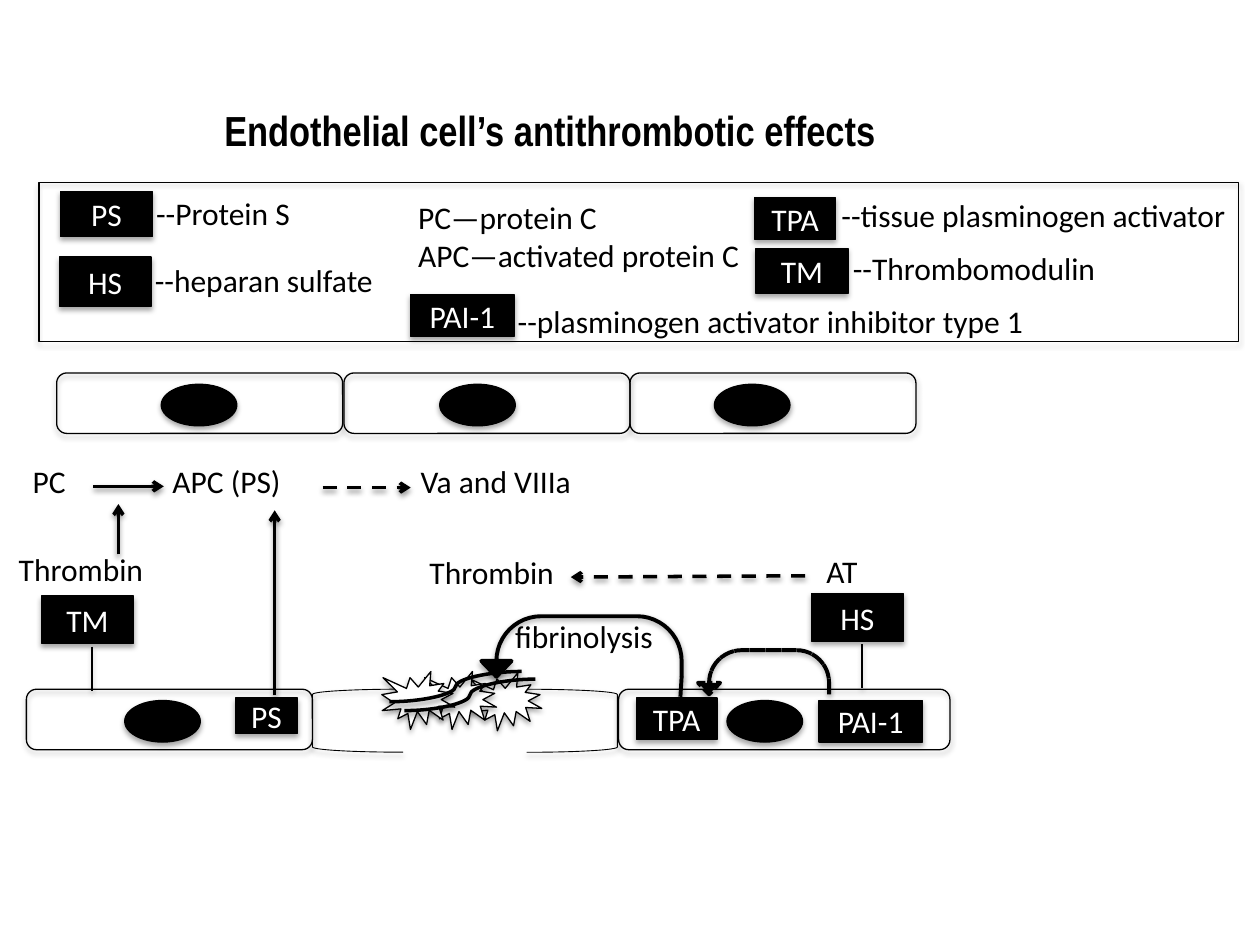
"""Build the slide on the antithrombotic effects of endothelial cells."""
import lxml.etree
import pptx
import pptx.dml.color
import pptx.enum.dml
import pptx.enum.shapes
import pptx.enum.text
import pptx.oxml.ns
import pptx.util

Inches, Pt = pptx.util.Inches, pptx.util.Pt
SHAPE = pptx.enum.shapes.MSO_SHAPE
CONNECTOR = pptx.enum.shapes.MSO_CONNECTOR
DASH = pptx.enum.dml.MSO_LINE
ALIGN = pptx.enum.text.PP_ALIGN
ANCHOR = pptx.enum.text.MSO_ANCHOR
BLACK = pptx.dml.color.RGBColor(0, 0, 0)
WHITE = pptx.dml.color.RGBColor(255, 255, 255)

TITLE = "Endothelial cell’s antithrombotic effects"
LEGEND_FRAME = (0.31, 1.45, 9.52, 1.26)
CELL_HEIGHT = 0.48
NUCLEUS_DROP, NUCLEUS_SIZE = 0.09, (0.6, 0.33)
CELLS = [  # left, top, width, nucleus left
    (0.45, 2.96, 2.27, 1.28),
    (2.73, 2.96, 2.27, 3.49),
    (5, 2.96, 2.27, 5.67),
    (0.21, 5.47, 2.27, 0.99),
    (4.91, 5.47, 2.63, 5.77),
]
GAP_EDGES = [(2.48, 0), (4.18, 180)]
FACTORS = [
    ("PS", 0.48, 1.52, 0.73, 0.36),
    ("HS", 0.47, 2.04, 0.73, 0.39),
    ("TPA", 5.99, 1.57, 0.64, 0.33),
    ("TM", 6, 1.97, 0.73, 0.36),
    ("PAI-1", 3.26, 2.34, 0.82, 0.33),
    ("PS", 1.87, 5.54, 0.49, 0.28),
    ("TPA", 5.05, 5.54, 0.64, 0.33),
    ("PAI-1", 6.5, 5.56, 0.82, 0.33),
]
RECEPTORS = [("TM", 0.33, 4.73, 0.73, 0.38), ("HS", 6.44, 4.71, 0.73, 0.38)]
RECEPTOR_LEG = (1.06, 0.55, 1.98, 0.55)
NOTES = [
    ("--Protein S", 1.14, 1.49, 1.47),
    ("--heparan sulfate", 1.13, 2.02, 2.18),
    ("PC—protein C\nAPC—activated protein C", 3.22, 1.52, 3.08),
    ("--tissue plasminogen activator", 6.58, 1.51, 3.42),
    ("--Thrombomodulin", 6.67, 1.93, 2.46),
    ("--plasminogen activator inhibitor type 1", 4.01, 2.35, 5.32),
    ("PC", 0.16, 3.62, 1.35),
    ("APC (PS)", 1.27, 3.62, 1.45),
    ("Va and VIIIa", 3.24, 3.62, 1.95),
    ("Thrombin", 0.05, 4.32, 1.41),
    ("Thrombin", 3.31, 4.34, 1.35),
    ("AT", 6.46, 4.33, 0.54),
    ("fibrinolysis", 3.99, 4.85, 1.54),
]
ACTIVATIONS = [
    (0.74, 3.86, 1.3, 3.86),
    (0.94, 4.4, 0.94, 4),
    (2.18, 5.52, 2.18, 4.05),
]
INHIBITIONS = [(2.56, 3.87, 3.26, 3.87), (6.39, 4.57, 4.53, 4.58)]
TURNS = [
    ((3.82, 4.89, 1.59, 0.48), None),
    ((5.54, 5.16, 1.04, 0.35), DASH.SQUARE_DOT),
]
TURN_ADJUSTMENTS = (0, 0.25, 0.26, 0.74, 1)
TPA_STEM = (5.41, 5.37, 5.4, 5.53)
PLATELETS = [(3.72, 5.34), (3.36, 5.33), (3.03, 5.33)]
FIBRIN = [(3.09, 5.57, 4.14, 5.33), (3.21, 5.64, 4.25, 5.39)]


def add_shadow(item, opacity):
    effects = lxml.etree.SubElement(item._element.spPr, pptx.oxml.ns.qn("a:effectLst"))
    shadow = lxml.etree.SubElement(
        effects, pptx.oxml.ns.qn("a:outerShdw"), blurRad=str(Pt(3.1)),
        dist=str(Pt(1.8)), dir="5400000", rotWithShape="0")
    color = lxml.etree.SubElement(shadow, pptx.oxml.ns.qn("a:srgbClr"), val="000000")
    lxml.etree.SubElement(color, pptx.oxml.ns.qn("a:alpha"), val=str(opacity * 1000))


def style_line(line, width, dash=None):
    line.color.rgb = BLACK
    line.width = Pt(width)
    if dash is not None:
        line.dash_style = dash


def style_text(frame, color, font="Calibri", size=18, bold=False, align=ALIGN.LEFT):
    for paragraph in frame.paragraphs:
        paragraph.alignment = align
        for run in paragraph.runs:
            run.font.name, run.font.size, run.font.bold = font, Pt(size), bold
            run.font.color.rgb = color


def add_figure(slide, kind, box, fill=None, width=0.75, dash=None, adjustments=()):
    figure = slide.shapes.add_shape(kind, *map(Inches, box))
    for index, value in enumerate(adjustments):
        figure.adjustments[index] = value
    if fill is None:
        figure.fill.background()
    else:
        figure.fill.solid()
        figure.fill.fore_color.rgb = fill
    style_line(figure.line, width, dash)
    add_shadow(figure, 35)
    return figure


def add_factor(slide, kind, name, box, adjustments=()):
    factor = add_figure(slide, kind, box, BLACK, adjustments=adjustments)
    factor.text_frame.text = name
    factor.text_frame.vertical_anchor = ANCHOR.MIDDLE
    style_text(factor.text_frame, WHITE, align=ALIGN.CENTER)


def add_link(slide, ends, kind=CONNECTOR.STRAIGHT, width=2, dash=None, arrow=False):
    link = slide.shapes.add_connector(kind, *map(Inches, ends))
    style_line(link.line, width, dash)
    if arrow:
        lxml.etree.SubElement(
            link.line._get_or_add_ln(), pptx.oxml.ns.qn("a:tailEnd"), type="arrow")
    add_shadow(link, 38)


def add_note(slide, text, left, top, width):
    height = 0.4 + 0.31 * text.count("\n")
    note = slide.shapes.add_textbox(*map(Inches, (left, top, width, height)))
    note.text_frame.word_wrap = True
    note.text_frame.text = text
    note.text_frame.auto_size = pptx.enum.text.MSO_AUTO_SIZE.SHAPE_TO_FIT_TEXT
    style_text(note.text_frame, BLACK)


def add_title(slide):
    title = slide.shapes.title
    title.left, title.top, title.width, title.height = map(Inches, (1.68, 0.78, 8.05, 0.88))
    title.text_frame.text = TITLE
    title.text_frame.vertical_anchor = ANCHOR.TOP
    style_text(title.text_frame, BLACK, "Arial Narrow", 24, True)


def main():
    deck = pptx.Presentation()
    deck.slide_width, deck.slide_height = Inches(10), Inches(7.5)
    slide = deck.slides.add_slide(deck.slide_layouts[5])
    add_title(slide)
    add_figure(slide, SHAPE.RECTANGLE, LEGEND_FRAME)
    for left, top, width, nucleus_left in CELLS:
        add_figure(slide, SHAPE.ROUNDED_RECTANGLE, (left, top, width, CELL_HEIGHT))
        nucleus = (nucleus_left, top + NUCLEUS_DROP, *NUCLEUS_SIZE)
        add_figure(slide, SHAPE.OVAL, nucleus, BLACK)
    for left, angle in GAP_EDGES:
        edge = add_figure(slide, SHAPE.LEFT_BRACKET, (left, 5.47, 0.72, 0.5), width=0.5)
        edge.rotation = angle
    for name, *box in RECEPTORS:
        add_factor(slide, SHAPE.LINE_CALLOUT_1, name, box, RECEPTOR_LEG)
    for name, *box in FACTORS:
        add_factor(slide, SHAPE.RECTANGLE, name, box)
    for ends in ACTIVATIONS:
        add_link(slide, ends, arrow=True)
    for ends in INHIBITIONS:
        add_link(slide, ends, dash=DASH.DASH, arrow=True)
    for box, dash in TURNS:
        turn = add_figure(slide, SHAPE.U_TURN_ARROW, box, BLACK, 2.25, dash, TURN_ADJUSTMENTS)
        turn.rotation = 180
        turn._element.spPr.xfrm.set("flipV", "1")
    add_link(slide, TPA_STEM, width=2.25)
    for left, top in PLATELETS:
        add_figure(slide, SHAPE.EXPLOSION1, (left, top, 0.58, 0.46), WHITE)
    for ends in FIBRIN:
        add_link(slide, ends, CONNECTOR.CURVE)
    for note in NOTES:
        add_note(slide, *note)
    deck.save("out.pptx")


if __name__ == "__main__":
    main()
